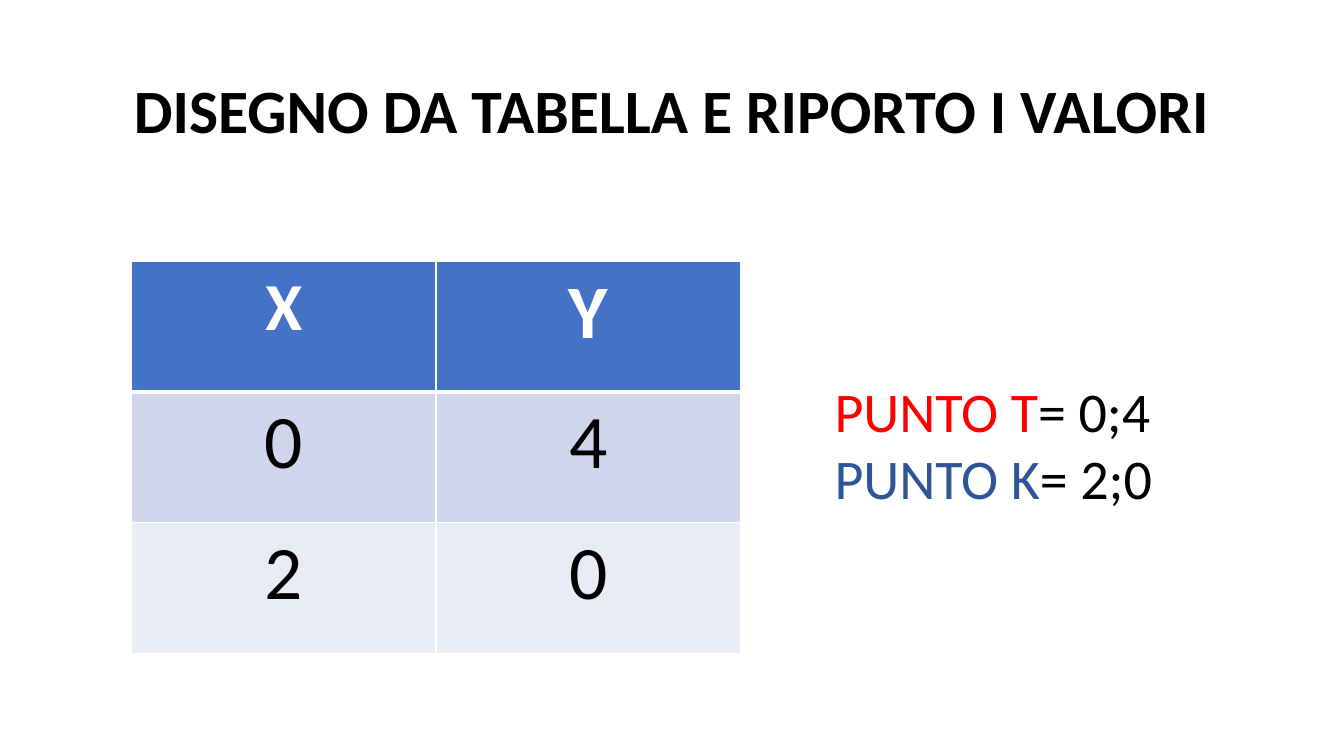
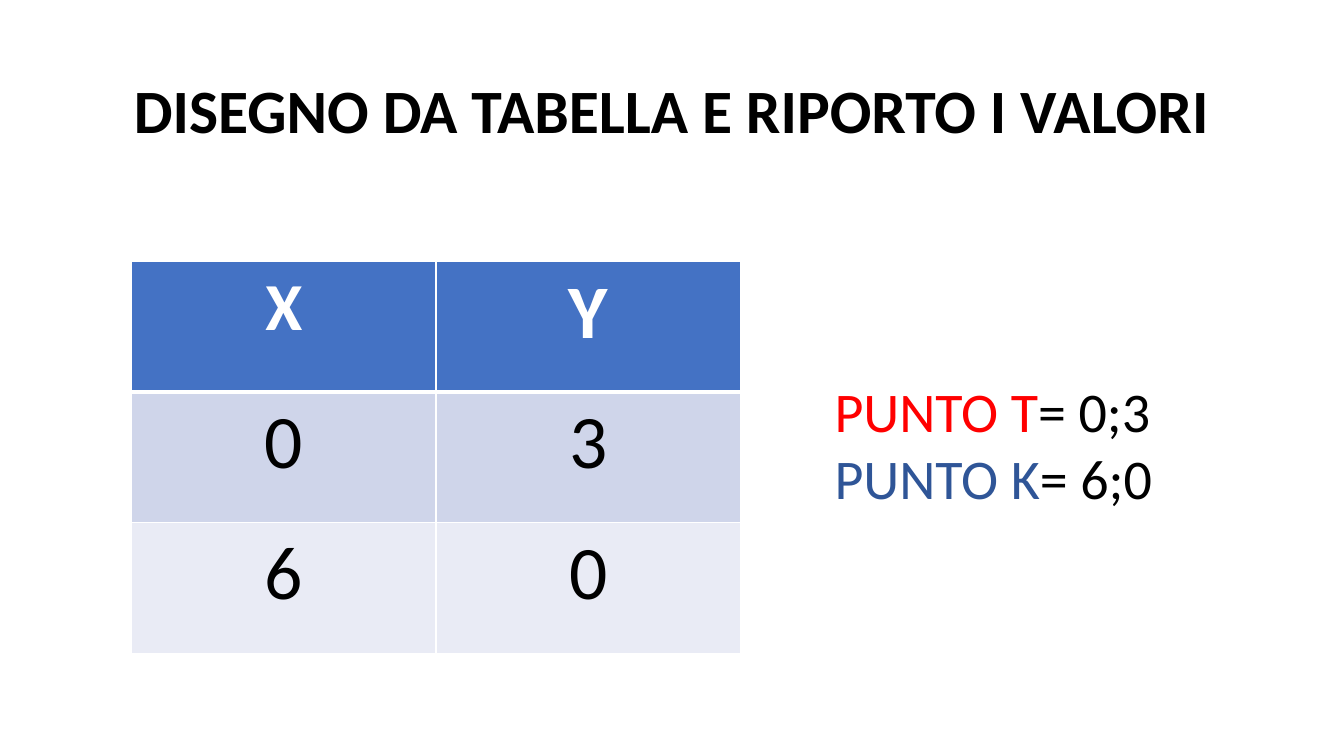
from dataclasses import dataclass

from pptx import Presentation
from pptx.dml.color import RGBColor
from pptx.enum.text import MSO_ANCHOR, PP_ALIGN
from pptx.oxml.ns import qn
from pptx.util import Pt
from lxml import etree

CENTER = PP_ALIGN.CENTER
MIDDLE = MSO_ANCHOR.MIDDLE
TOP = MSO_ANCHOR.TOP

TITLE = "DISEGNO DA TABELLA E RIPORTO I VALORI"
HEADERS = ("X", "Y")
POINT_NAMES = ("PUNTO T", "PUNTO K")
SLIDES = [
    [(0, 4), (2, 0)],
    [(0, 3), (6, 0)],
]


@dataclass(frozen=True)
class Theme:
    font: str = "Calibri"
    black: str = "000000"
    white: str = "FFFFFF"
    header_fill: str = "4472C4"
    row_fills: tuple = ("CFD5EA", "E9EBF5")
    point_colors: tuple = ("FF0000", "2F5597")
    title_size: int = 44
    header_sizes: tuple = (48, 54)
    value_size: int = 54
    point_size: int = 40
    thin_line: int = 1
    thick_line: int = 3


THEME = Theme()
SLIDE_SIZE = (960, 540)
TITLE_AREA = (66, 28.75, 828, 104.4)
TABLE_AREA = (94, 186.6, 435, 280)
POINTS_AREA = (589, 265.5, 250.5, 104.2)


def style_run(span, size, color, bold=False):
    span.font.name = THEME.font
    span.font.size = Pt(size)
    span.font.bold = bold
    span.font.color.rgb = RGBColor.from_string(color)


def add_text_box(page, area, anchor):
    box = page.shapes.add_textbox(*map(Pt, area))
    frame = box.text_frame
    frame.word_wrap = True
    frame.vertical_anchor = anchor
    return frame


def add_title(page):
    para = add_text_box(page, TITLE_AREA, MIDDLE).paragraphs[0]
    para.text = TITLE
    para.alignment = CENTER
    para.line_spacing = 0.9
    style_run(para.runs[0], THEME.title_size, THEME.black, bold=True)


def set_borders(cell, widths):
    """Draw white borders; widths are left, right, top, bottom."""
    properties = cell._tc.get_or_add_tcPr()
    for index, (side, width) in enumerate(zip("LRTB", widths)):
        line = etree.Element(qn(f"a:ln{side}"), w=str(Pt(width)))
        fill = etree.SubElement(line, qn("a:solidFill"))
        etree.SubElement(fill, qn("a:srgbClr"), val=THEME.white)
        properties.insert(index, line)


def fill_cell(cell, text, size, color, fill, bold):
    cell.fill.solid()
    cell.fill.fore_color.rgb = RGBColor.from_string(fill)
    para = cell.text_frame.paragraphs[0]
    para.text = text
    para.alignment = CENTER
    style_run(para.runs[0], size, color, bold)


def add_value_table(page, points):
    rows = [HEADERS, *points]
    table = page.shapes.add_table(len(rows), len(HEADERS), *map(Pt, TABLE_AREA)).table
    thin, thick = THEME.thin_line, THEME.thick_line
    for row_index, values in enumerate(rows):
        is_header = row_index == 0
        fill = THEME.header_fill if is_header else THEME.row_fills[row_index - 1]
        color = THEME.white if is_header else THEME.black
        above = thick if row_index == 1 else thin
        below = thick if is_header else thin
        for column, value in enumerate(values):
            size = THEME.header_sizes[column] if is_header else THEME.value_size
            cell = table.cell(row_index, column)
            fill_cell(cell, str(value), size, color, fill, is_header)
            set_borders(cell, (thin, thin, above, below))


def add_point_list(page, points):
    frame = add_text_box(page, POINTS_AREA, TOP)
    frame.text = "\n".join(POINT_NAMES)
    for para, color, (x, y) in zip(frame.paragraphs, THEME.point_colors, points):
        style_run(para.runs[0], THEME.point_size, color)
        coordinates = para.add_run()
        coordinates.text = f"= {x};{y}"
        style_run(coordinates, THEME.point_size, THEME.black)


def main():
    deck = Presentation()
    deck.slide_width, deck.slide_height = map(Pt, SLIDE_SIZE)
    blank = deck.slide_layouts[6]
    for points in SLIDES:
        page = deck.slides.add_slide(blank)
        add_title(page)
        add_value_table(page, points)
        add_point_list(page, points)
    deck.save("out.pptx")


if __name__ == "__main__":
    main()
